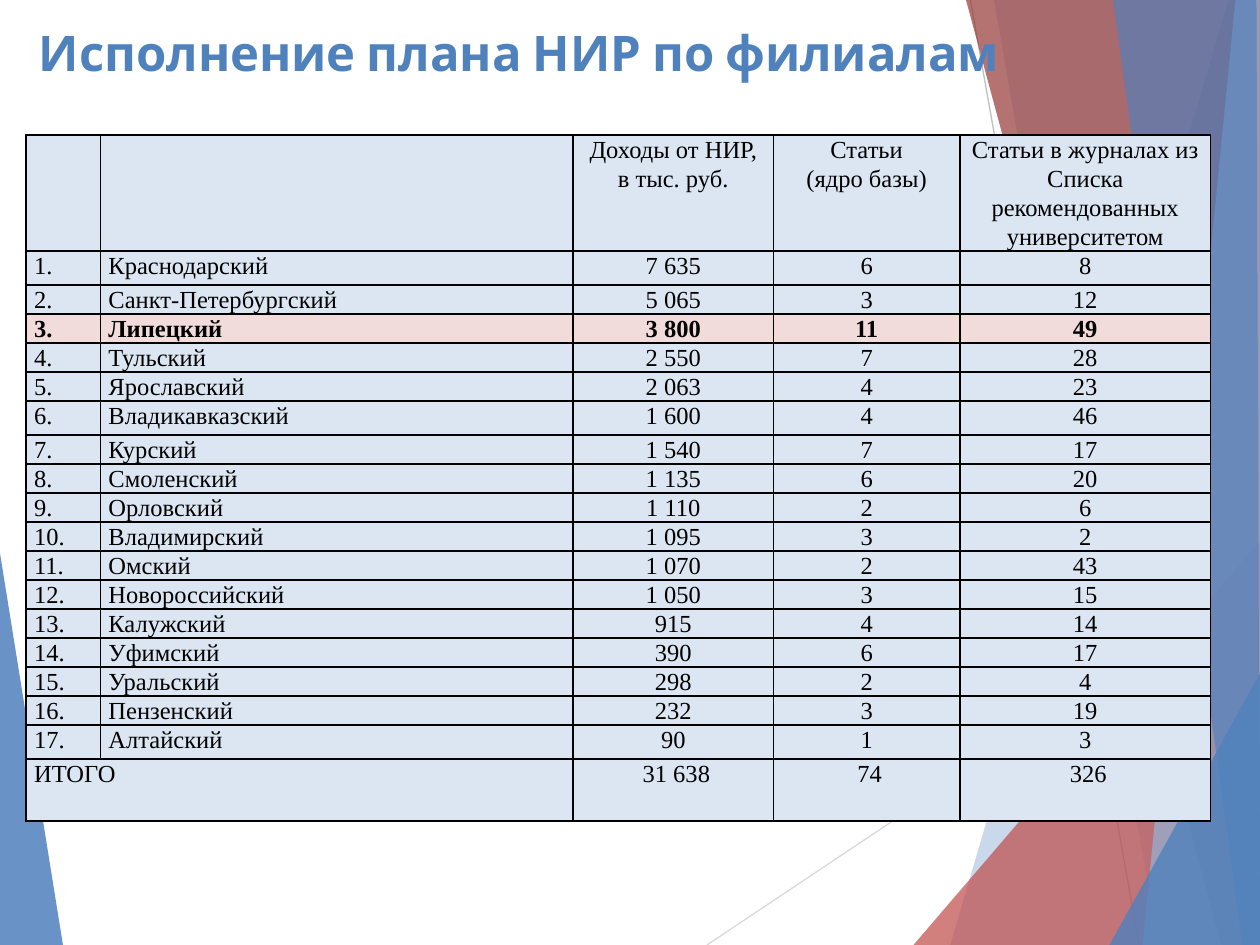
import pptx
import pptx.util
import pptx.dml.color
import pptx.enum.shapes
import pptx.enum.text
import pptx.oxml
import pptx.oxml.ns
import lxml.etree
from dataclasses import dataclass

Pt = pptx.util.Pt
qn = pptx.oxml.ns.qn
Point = tuple[float, float]

COLORS = {
    "blue": "4F81BD", "pale_blue": "95B3D7", "red": "C0504D", "dark_red": "953735",
    "light_gray": "D9D9D9", "gray": "BFBFBF", "black": "000000",
    "cell": "DCE6F2", "highlight": "F2DCDB",
}
WIDTH, HEIGHT = 720, 540
TABLE_FONT = "Times New Roman"
COLUMN_WIDTHS = [42.5, 270, 114.5, 106.5, 143.3]
ROW_HEIGHT, TALL_ROW_HEIGHT = 15.1, 19.4
CENTER = pptx.enum.text.PP_ALIGN.CENTER
LEFT = pptx.enum.text.PP_ALIGN.LEFT


@dataclass
class Facet:
    points: list[Point]
    color: str
    opacity: int


@dataclass
class Ray:
    start: Point
    end: Point
    color: str


@dataclass
class Branch:
    name: str
    income: str
    core_articles: str
    list_articles: str
    height: float = ROW_HEIGHT
    highlighted: bool = False


DECORATION = [
    Facet([(0, 316), (35.5, 540), (0, 540)], "blue", 85),
    Ray((404, 540), (720, 329), "light_gray"),
    Ray((554.5, 0), (651, 540), "gray"),
    Facet([(702, 0), (543, 540), (720, 540), (720, 0)], "blue", 30),
    Facet([(567.5, 0), (661.5, 540), (720, 540), (720, 0)], "blue", 20),
    Facet([(522.5, 540), (720, 309), (720, 540)], "red", 72),
    Facet([(552, 0), (698.5, 540), (720, 540), (720, 0)], "dark_red", 70),
    Facet([(706.5, 0), (653, 540), (720, 540), (720, 0)], "pale_blue", 70),
    Facet([(636, 0), (710, 540), (720, 540), (718.5, 0)], "blue", 65),
    Facet([(634.5, 540), (720, 385), (720, 540)], "blue", 80),
]

HEADERS = [
    "", "", "Доходы от НИР,\nв тыс. руб.", "Статьи\n(ядро базы)",
    "Статьи в журналах из Списка рекомендованных университетом",
]
BRANCHES = [
    Branch("Краснодарский", "7 635", "6", "8", TALL_ROW_HEIGHT),
    Branch("Санкт-Петербургский", "5 065", "3", "12"),
    Branch("Липецкий", "3 800", "11", "49", highlighted=True),
    Branch("Тульский", "2 550", "7", "28"),
    Branch("Ярославский", "2 063", "4", "23"),
    Branch("Владикавказский", "1 600", "4", "46", TALL_ROW_HEIGHT),
    Branch("Курский", "1 540", "7", "17"),
    Branch("Смоленский", "1 135", "6", "20"),
    Branch("Орловский", "1 110", "2", "6"),
    Branch("Владимирский", "1 095", "3", "2"),
    Branch("Омский", "1 070", "2", "43"),
    Branch("Новороссийский", "1 050", "3", "15"),
    Branch("Калужский", "915", "4", "14"),
    Branch("Уфимский", "390", "6", "17"),
    Branch("Уральский", "298", "2", "4"),
    Branch("Пензенский", "232", "3", "19"),
    Branch("Алтайский", "90", "1", "3", TALL_ROW_HEIGHT),
]
TOTALS = ["ИТОГО", "", " 31 638", " 74", " 326"]


def rgb(name: str) -> pptx.dml.color.RGBColor:
    return pptx.dml.color.RGBColor.from_string(COLORS[name])


def draw_facet(shapes, facet: Facet) -> None:
    builder = shapes.build_freeform(*facet.points[0], scale=Pt(1))
    builder.add_line_segments(facet.points[1:], close=True)
    shape = builder.convert_to_shape()
    shape.shadow.inherit = False
    shape.line.fill.background()
    shape.fill.solid()
    shape.fill.fore_color.rgb = rgb(facet.color)
    color = shape.element.spPr.find(".//" + qn("a:srgbClr"))
    lxml.etree.SubElement(color, qn("a:alpha")).set("val", str(facet.opacity * 1000))


def draw_ray(shapes, ray: Ray) -> None:
    connector = shapes.add_connector(
        pptx.enum.shapes.MSO_CONNECTOR.STRAIGHT,
        *(Pt(value) for value in ray.start + ray.end))
    connector.line.color.rgb = rgb(ray.color)
    connector.line.width = Pt(0.75)
    lxml.etree.SubElement(connector.element.spPr, qn("a:effectLst"))


def add_styled_run(para, text: str, font: str, size: float, color: str, bold: bool) -> None:
    run = para.add_run()
    run.text = text
    run.font.name = font
    run.font.size = Pt(size)
    run.font.bold = bold
    run.font.color.rgb = rgb(color)


def draw_borders(cell) -> None:
    properties = cell._tc.get_or_add_tcPr()
    for side in ("lnL", "lnR", "lnT", "lnB"):
        border = lxml.etree.SubElement(properties, qn("a:" + side), w=str(Pt(1)))
        fill = lxml.etree.SubElement(border, qn("a:solidFill"))
        lxml.etree.SubElement(fill, qn("a:srgbClr"), val=COLORS["black"])


def fill_cell(cell, text: str, align, highlighted: bool) -> None:
    draw_borders(cell)
    cell.fill.solid()
    cell.fill.fore_color.rgb = rgb("highlight" if highlighted else "cell")
    cell.margin_left = cell.margin_right = Pt(4.5)
    cell.margin_top = cell.margin_bottom = 0
    frame = cell.text_frame
    for index, line in enumerate(text.split("\n") if text else []):
        para = frame.add_paragraph() if index else frame.paragraphs[0]
        para.alignment = align
        para.line_spacing = 1.07
        add_styled_run(para, line, TABLE_FONT, 14, "black", highlighted)


def draw_table(slide) -> None:
    branch_rows = [
        [f"{number}.", branch.name, branch.income, branch.core_articles, branch.list_articles]
        for number, branch in enumerate(BRANCHES, 1)
    ]
    rows = [HEADERS, *branch_rows, TOTALS]
    heights = [66.3, *(branch.height for branch in BRANCHES), 35.3]
    highlights = [False, *(branch.highlighted for branch in BRANCHES), False]
    table = slide.shapes.add_table(
        len(rows), len(COLUMN_WIDTHS), Pt(15), Pt(77.2),
        Pt(sum(COLUMN_WIDTHS)), Pt(sum(heights))).table
    table.first_row = table.horz_banding = False
    for column, width in zip(table.columns, COLUMN_WIDTHS):
        column.width = Pt(width)
    for row, height, texts, highlighted in zip(table.rows, heights, rows, highlights):
        row.height = Pt(height)
        for index, (cell, text) in enumerate(zip(row.cells, texts)):
            fill_cell(cell, text, LEFT if index < 2 else CENTER, highlighted)
    last = len(rows) - 1
    table.cell(last, 0).merge(table.cell(last, 1))


def draw_title(slide) -> None:
    title = slide.shapes.title
    title.left, title.top, title.width, title.height = Pt(15), Pt(9.4), Pt(646.5), Pt(51)
    frame = title.text_frame
    frame.word_wrap = True
    frame.vertical_anchor = pptx.enum.text.MSO_ANCHOR.TOP
    para = frame.paragraphs[0]
    para.alignment = LEFT
    add_styled_run(para, "Исполнение плана НИР по филиалам", "Cabin", 28, "blue", True)
    title.element.getparent().append(title.element)


def main() -> None:
    deck = pptx.Presentation()
    deck.slide_width, deck.slide_height = Pt(WIDTH), Pt(HEIGHT)
    slide = deck.slides.add_slide(deck.slide_layouts[5])
    group = slide.shapes.add_group_shape()
    for item in DECORATION:
        if isinstance(item, Facet):
            draw_facet(group.shapes, item)
        else:
            draw_ray(group.shapes, item)
    draw_title(slide)
    draw_table(slide)
    deck.save("out.pptx")


if __name__ == "__main__":
    main()
